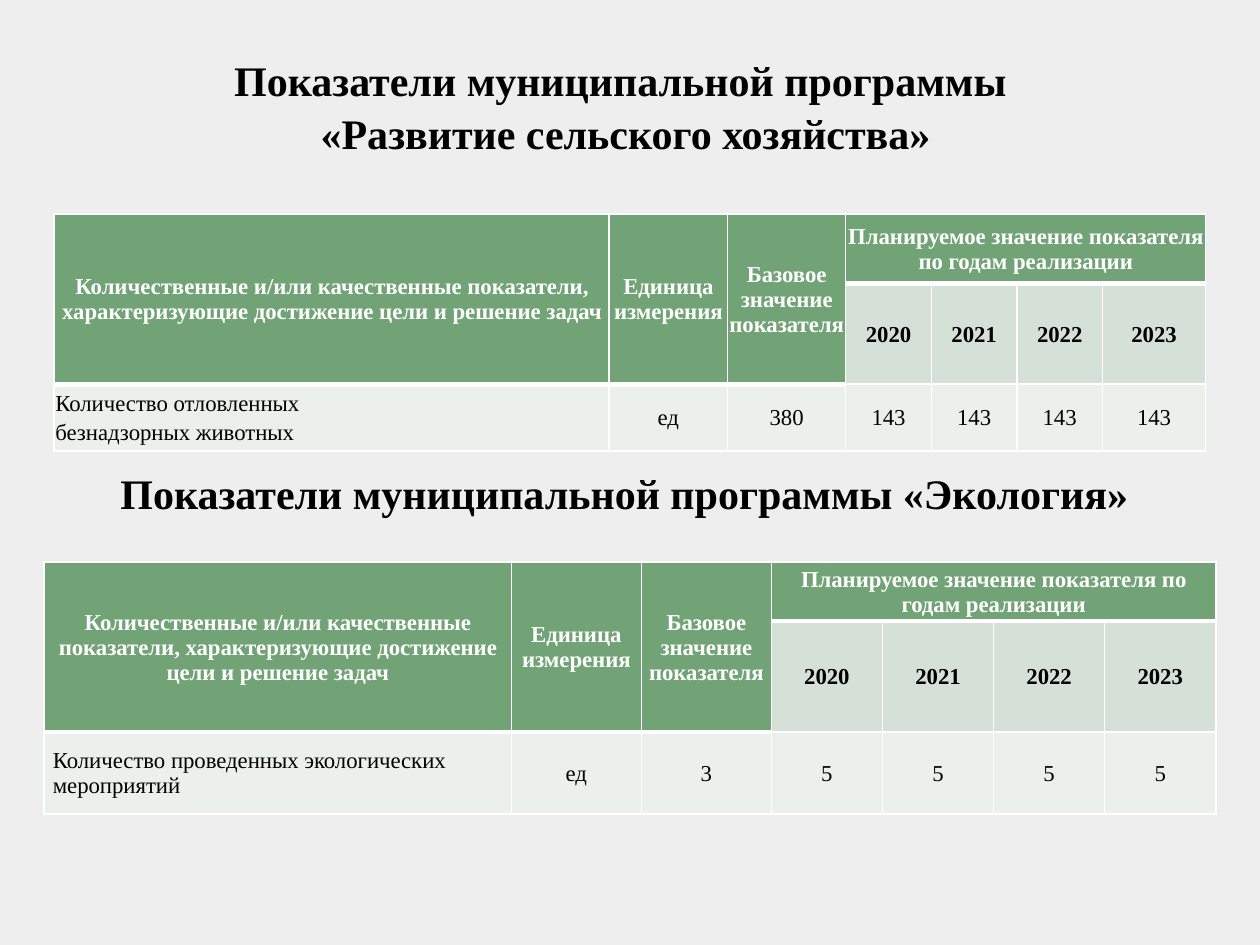
import dataclasses

import lxml.etree
import pptx
import pptx.dml.color
import pptx.enum.text
import pptx.oxml.ns
import pptx.util

Inches = pptx.util.Inches
Pt = pptx.util.Pt
Align = pptx.enum.text.PP_ALIGN
Anchor = pptx.enum.text.MSO_ANCHOR


@dataclasses.dataclass(frozen=True)
class Theme:
    font: str = "Times New Roman"
    background: str = "EEEEEE"
    header: str = "72A376"
    years: str = "D5E0D6"
    body: str = "EBF0EC"
    dark: str = "000000"
    light: str = "FFFFFF"
    heading_size: float = 24
    table_size: float = 13
    thin: float = 1
    thick: float = 3


THEME = Theme()
HEADER_LABELS = [
    "Количественные и/или качественные показатели, характеризующие достижение цели и решение задач",
    "Единица измерения",
    "Базовое значение показателя",
    "Планируемое значение показателя по годам реализации",
]
YEARS = ["2020", "2021", "2022", "2023"]
FIRST_YEAR = 3  # column where the yearly values begin


def color(value):
    return pptx.dml.color.RGBColor.from_string(value)


def write_text(frame, text, *, size, bold=False, ink=THEME.dark, align=Align.CENTER,
               gap=0, line_spacing=None):
    """Fill a text frame: each line is a paragraph, a vertical tab is a line break."""
    frame.word_wrap = True
    for index, line in enumerate(text.split("\n")):
        paragraph = frame.paragraphs[0] if index == 0 else frame.add_paragraph()
        paragraph.text = line
        paragraph.alignment = align
        paragraph.space_before = Pt(gap if index else 0)
        paragraph.line_spacing = line_spacing
        for run in paragraph.runs:
            run.font.name = THEME.font
            run.font.size = Pt(size)
            run.font.bold = bold
            run.font.color.rgb = color(ink)


def place(shape, box):
    shape.left, shape.top, shape.width, shape.height = map(Inches, box)


def set_borders(cell, top, bottom):
    """Draw the four cell edges, which must come before the fill."""
    properties = cell._tc.get_or_add_tcPr()
    widths = {"lnL": THEME.thin, "lnR": THEME.thin, "lnT": top, "lnB": bottom}
    for position, (tag, width) in enumerate(widths.items()):
        line = lxml.etree.Element(pptx.oxml.ns.qn(f"a:{tag}"), w=str(Pt(width)))
        fill = lxml.etree.SubElement(line, pptx.oxml.ns.qn("a:solidFill"))
        lxml.etree.SubElement(fill, pptx.oxml.ns.qn("a:srgbClr"), val=THEME.light)
        properties.insert(position, line)


def add_title(slide, box):
    title = slide.shapes.title
    place(title, box)
    frame = title.text_frame
    frame.auto_size = pptx.enum.text.MSO_AUTO_SIZE.NONE
    frame.vertical_anchor = Anchor.BOTTOM
    write_text(frame, "Показатели муниципальной программы \v«Развитие сельского хозяйства»",
               size=THEME.heading_size, bold=True, line_spacing=1.05)


def add_heading(slide, box, text):
    heading = slide.shapes.add_textbox(*map(Inches, box))
    write_text(heading.text_frame, text, size=THEME.heading_size, bold=True)


def add_indicator_table(slide, box, columns, rows, values, label_inset):
    """Place a table with a two-row header and one row of values."""
    table = slide.shapes.add_table(len(rows), len(columns), *map(Inches, box)).table
    for column, share in zip(table.columns, columns):
        column.width = Inches(box[2] * share / sum(columns))
    for row, share in zip(table.rows, rows):
        row.height = Inches(box[3] * share / sum(rows))

    # Fills, margins and borders
    for row in range(len(rows)):
        for column in range(len(columns)):
            cell = table.cell(row, column)
            is_header = row == 0 or (row == 1 and column < FIRST_YEAR)
            fill = THEME.header if is_header else (THEME.body, THEME.years)[row == 1]
            cell.fill.solid()
            cell.fill.fore_color.rgb = color(fill)
            cell.vertical_anchor = Anchor.MIDDLE
            cell.margin_left = cell.margin_right = cell.margin_top = Inches(0.01)
            cell.margin_bottom = 0
            last_header_row = 1 if column < FIRST_YEAR else 0
            set_borders(cell,
                        THEME.thick if row == last_header_row + 1 else THEME.thin,
                        THEME.thick if row == last_header_row else THEME.thin)

    # Header
    for column in range(FIRST_YEAR):
        table.cell(0, column).merge(table.cell(1, column))
    table.cell(0, FIRST_YEAR).merge(table.cell(0, len(columns) - 1))
    for column, label in enumerate(HEADER_LABELS):
        write_text(table.cell(0, column).text_frame, label,
                   size=THEME.table_size, bold=True, ink=THEME.light)
    for column, year in enumerate(YEARS, FIRST_YEAR):
        write_text(table.cell(1, column).text_frame, year, size=THEME.table_size, bold=True)

    # Values
    for column, value in enumerate(values):
        write_text(table.cell(2, column).text_frame, value, size=THEME.table_size,
                   align=Align.CENTER if column else Align.LEFT,
                   gap=0.2 * THEME.table_size)
    label_cell = table.cell(2, 0)
    label_cell.margin_left = label_cell.margin_right = Inches(label_inset)


def main():
    presentation = pptx.Presentation()
    presentation.slide_width, presentation.slide_height = Inches(10), Inches(7.5)
    slide = presentation.slides.add_slide(presentation.slide_layouts.get_by_name("Title Only"))
    slide.background.fill.solid()
    slide.background.fill.fore_color.rgb = color(THEME.background)

    # Agriculture programme
    add_indicator_table(
        slide, (0.43, 1.7, 9.14, 1.88),
        columns=[4.41, 0.94, 0.94, 0.68, 0.68, 0.68, 0.82], rows=[0.55, 0.8, 0.53],
        values=["Количество отловленных\nбезнадзорных животных", "ед", "380"] + ["143"] * 4,
        label_inset=0.01)
    add_title(slide, (0.43, 0.52, 9.07, 0.78))

    # Ecology programme
    add_heading(slide, (0.35, 3.66, 9.21, 0.5), "Показатели муниципальной программы «Экология»")
    add_indicator_table(
        slide, (0.35, 4.46, 9.3, 2),
        columns=[3.7, 1.03, 1.03] + [0.88] * 4, rows=[0.47, 0.88, 0.65],
        values=["Количество проведенных экологических мероприятий", "ед", "3"] + ["5"] * 4,
        label_inset=0.07)

    presentation.save("out.pptx")


if __name__ == "__main__":
    main()
